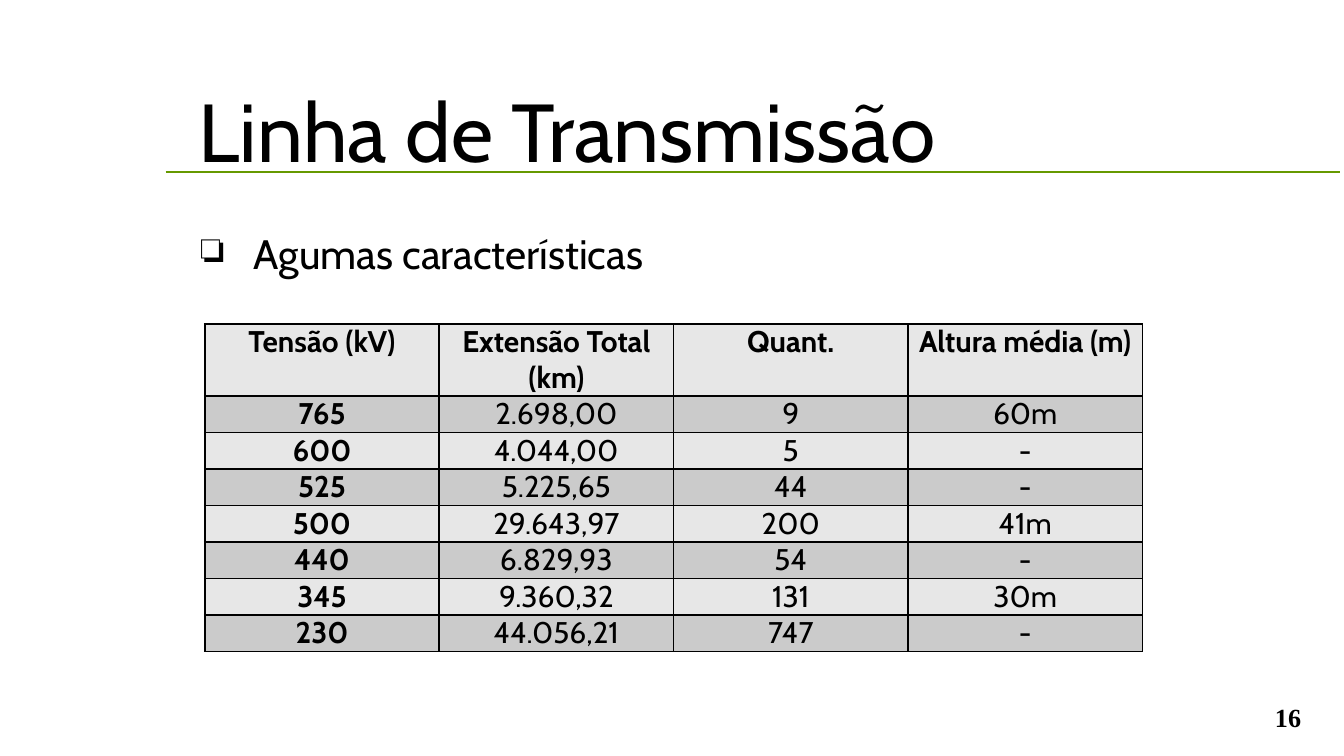
from lxml.etree import SubElement
from pptx import Presentation
from pptx.dml.color import RGBColor
from pptx.enum.shapes import MSO_CONNECTOR
from pptx.enum.text import MSO_ANCHOR, MSO_AUTO_SIZE, PP_ALIGN
from pptx.oxml.ns import qn
from pptx.util import Cm, Pt

TITLE = "Linha de Transmissão"
TOPIC = "Agumas características"
SLIDE_NUMBER = "16"
HEADERS = ("Tensão (kV)", "Extensão Total (km)", "Quant.", "Altura média (m)")
LINES = (
    ("765", "2.698,00", "9", "60m"),
    ("600", "4.044,00", "5", "-"),
    ("525", "5.225,65", "44", "-"),
    ("500", "29.643,97", "200", "41m"),
    ("440", "6.829,93", "54", "-"),
    ("345", "9.360,32", "131", "30m"),
    ("230", "44.056,21", "747", "-"),
)

THEME = {
    "font": "Cabin", "number_font": "Times New Roman",
    "text": "000000", "rule": "669900", "border": "000000",
    "bands": ("E7E7E7", "CBCBCB"),
    "title": 44, "topic": 22, "cell": 16, "number": 14,
}
COLUMN_WIDTH, HEADER_HEIGHT, ROW_HEIGHT = Cm(4.43), Cm(1.36), Cm(0.69)


def write(text_frame, text, size, alignment, bold=False, font="font"):
    text_frame.text = text
    paragraph = text_frame.paragraphs[0]
    paragraph.alignment = alignment
    run_font = paragraph.runs[0].font
    run_font.name = THEME[font]
    run_font.size = Pt(THEME[size])
    run_font.bold = bold
    run_font.color.rgb = RGBColor.from_string(THEME["text"])
    return paragraph


def add_text(slide, box, anchor, *args, **options):
    text_frame = slide.shapes.add_textbox(*map(Cm, box)).text_frame
    text_frame.word_wrap = True
    text_frame.vertical_anchor = anchor
    return write(text_frame, *args, **options)


def add_bullet(paragraph, character, margin, indent):
    properties = paragraph._p.get_or_add_pPr()
    properties.set("marL", str(margin))
    properties.set("indent", str(indent))
    SubElement(properties, qn("a:buChar"), char=character)


def add_borders(cell):
    properties = cell._tc.get_or_add_tcPr()
    for position, side in enumerate(("lnL", "lnR", "lnT", "lnB")):
        border = SubElement(properties, qn(f"a:{side}"), w=str(Pt(1)))
        fill = SubElement(border, qn("a:solidFill"))
        SubElement(fill, qn("a:srgbClr"), val=THEME["border"])
        properties.insert(position, border)


def add_title(slide):
    title = slide.shapes.title
    title.left, title.top, title.width, title.height = map(Cm, (3.5, 0.46, 21.34, 3.05))
    title.text_frame.vertical_anchor = MSO_ANCHOR.BOTTOM
    title.text_frame.auto_size = MSO_AUTO_SIZE.NONE
    write(title.text_frame, TITLE, "title", PP_ALIGN.LEFT)


def add_rule(slide):
    rule = slide.shapes.add_connector(
        MSO_CONNECTOR.STRAIGHT, Cm(3.13), Cm(3.25), Cm(25.32), Cm(3.25))
    rule.line.color.rgb = RGBColor.from_string(THEME["rule"])
    rule.line.width = Pt(1)
    SubElement(rule._element.spPr, qn("a:effectLst"))


def add_line_table(slide):
    rows = (HEADERS, *LINES)
    height = HEADER_HEIGHT + ROW_HEIGHT * len(LINES)
    table = slide.shapes.add_table(
        len(rows), len(HEADERS), Cm(3.87), Cm(6.12),
        COLUMN_WIDTH * len(HEADERS), height).table
    for column in table.columns:
        column.width = COLUMN_WIDTH
    for row_index, values in enumerate(rows):
        is_header = row_index == 0
        table.rows[row_index].height = HEADER_HEIGHT if is_header else ROW_HEIGHT
        for column_index, value in enumerate(values):
            cell = table.cell(row_index, column_index)
            cell.margin_left = cell.margin_right = Cm(0.18)
            cell.margin_top = cell.margin_bottom = 0
            cell.vertical_anchor = MSO_ANCHOR.TOP if is_header else MSO_ANCHOR.MIDDLE
            cell.fill.solid()
            cell.fill.fore_color.rgb = RGBColor.from_string(THEME["bands"][row_index % 2])
            add_borders(cell)
            write(cell.text_frame, value, "cell", PP_ALIGN.CENTER,
                  bold=is_header or column_index == 0)


def main():
    presentation = Presentation()
    presentation.slide_width, presentation.slide_height = Cm(25.4), Cm(14.28)
    slide = presentation.slides.add_slide(presentation.slide_layouts[5])
    add_rule(slide)
    add_title(slide)
    add_text(slide, (19.56, 13, 5.28, 0.97), MSO_ANCHOR.BOTTOM, SLIDE_NUMBER,
             "number", PP_ALIGN.RIGHT, bold=True, font="number_font")
    topic = add_text(slide, (3.28, 4.19, 21.74, 1.14), MSO_ANCHOR.TOP, TOPIC,
                     "topic", PP_ALIGN.JUSTIFY)
    add_bullet(topic, "❏", Cm(1.27), Cm(-1))
    add_line_table(slide)
    presentation.save("out.pptx")


if __name__ == "__main__":
    main()
